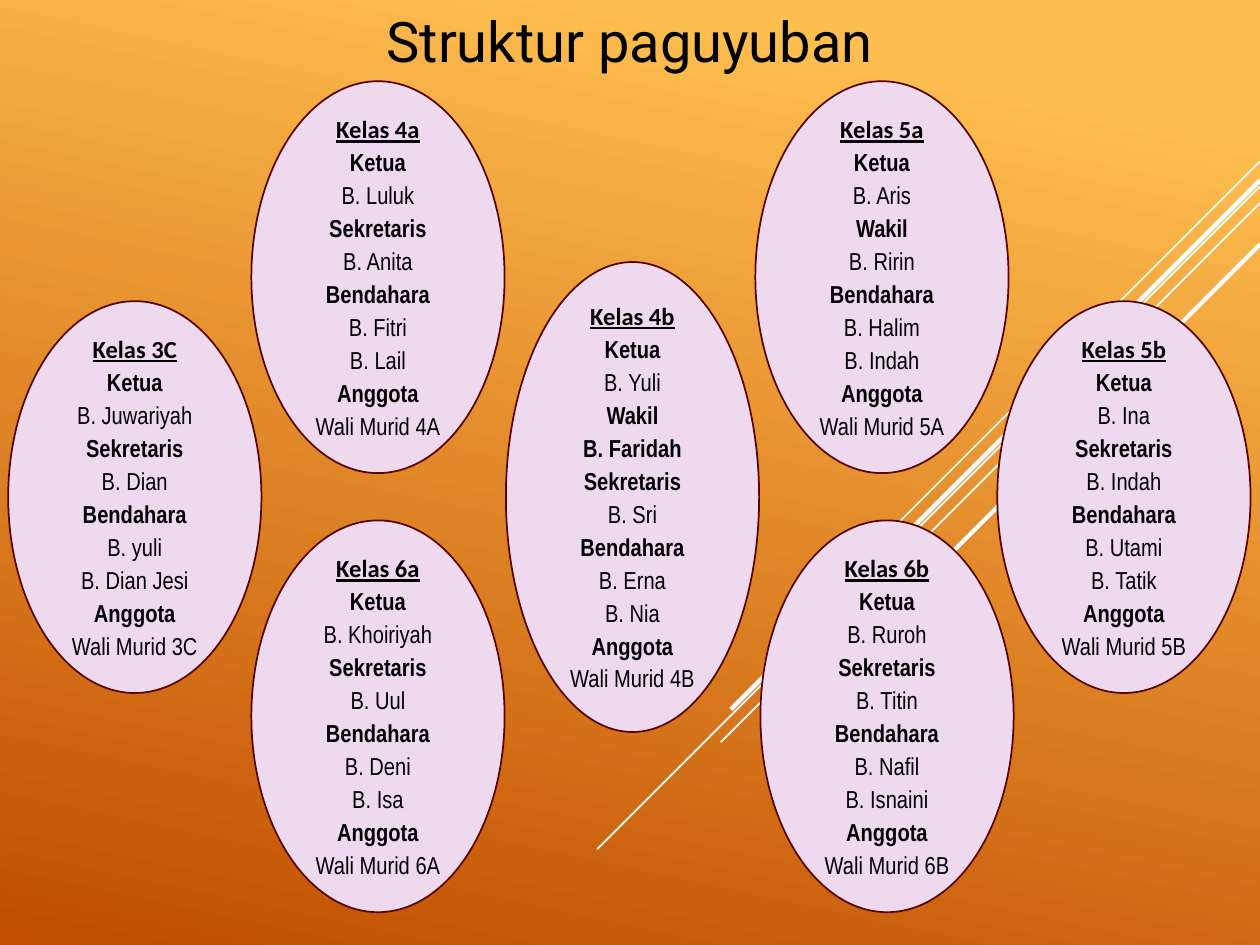
from pptx import Presentation
from pptx.dml.color import RGBColor
from pptx.enum.shapes import MSO_CONNECTOR, MSO_SHAPE
from pptx.enum.text import MSO_ANCHOR, PP_ALIGN
from pptx.oxml.ns import qn
from pptx.util import Inches, Pt
from lxml import etree

OVAL = MSO_SHAPE.OVAL
STRAIGHT = MSO_CONNECTOR.STRAIGHT
CENTER = PP_ALIGN.CENTER
MIDDLE = MSO_ANCHOR.MIDDLE

WIDTH, HEIGHT = 10, 7.5
OVAL_WIDTH, OVAL_HEIGHT, TALL_HEIGHT = 2.01, 3.11, 3.73
TOP_ROW, MIDDLE_ROW, BOTTOM_ROW = 2.2, 3.945, 5.685
FAR_LEFT, LEFT, CENTER_COLUMN, RIGHT, FAR_RIGHT = 1.07, 3, 5.02, 7, 8.92

TITLE = "Struktur paguyuban"
BACKGROUND = [(0.1, "FFBF50"), (1, "C04D00")]
ROLES = {"Ketua", "Wakil", "Sekretaris", "Bendahara", "Anggota"}
BOLD_NAMES = {"B. Faridah"}

STREAKS = [
    (10, 1.28, 3.43, 1),
    (10, 1.48, 5.26, 1),
    (10, 1.61, 4.28, 1),
    (10, 1.43, 4.2, 2.5),
    (10, 1.94, 3.75, 2.5),
]

CLASSES = [
    (LEFT, TOP_ROW, OVAL_HEIGHT, "Kelas 4a",
     ["Ketua", "B. Luluk", "Sekretaris", "B. Anita", "Bendahara",
      "B. Fitri", "B. Lail", "Anggota", "Wali Murid 4A"]),
    (LEFT, BOTTOM_ROW, OVAL_HEIGHT, "Kelas 6a",
     ["Ketua", "B. Khoiriyah", "Sekretaris", "B. Uul", "Bendahara",
      "B. Deni", "B. Isa", "Anggota", "Wali Murid 6A"]),
    (FAR_RIGHT, MIDDLE_ROW, OVAL_HEIGHT, "Kelas 5b",
     ["Ketua", "B. Ina", "Sekretaris", "B. Indah", "Bendahara",
      "B. Utami", "B. Tatik", "Anggota", "Wali Murid 5B"]),
    (FAR_LEFT, MIDDLE_ROW, OVAL_HEIGHT, "Kelas 3C",
     ["Ketua", "B. Juwariyah", "Sekretaris", "B. Dian", "Bendahara",
      "B. yuli", "B. Dian Jesi", "Anggota", "Wali Murid 3C"]),
    (RIGHT, TOP_ROW, OVAL_HEIGHT, "Kelas 5a",
     ["Ketua", "B. Aris", "Wakil", "B. Ririn", "Bendahara",
      "B. Halim", "B. Indah", "Anggota", "Wali Murid 5A"]),
    (CENTER_COLUMN, MIDDLE_ROW, TALL_HEIGHT, "Kelas 4b",
     ["Ketua", "B. Yuli", "Wakil", "B. Faridah", "Sekretaris", "B. Sri",
      "Bendahara", "B. Erna", "B. Nia", "Anggota", "Wali Murid 4B"]),
    (RIGHT + 0.04, BOTTOM_ROW, OVAL_HEIGHT, "Kelas 6b",
     ["Ketua", "B. Ruroh", "Sekretaris", "B. Titin", "Bendahara",
      "B. Nafil", "B. Isnaini", "Anggota", "Wali Murid 6B"]),
]


def color(value):
    return RGBColor.from_string(value)


def format_text(para, font_name, size, bold=False, underline=False):
    para.alignment = CENTER
    for span in para.runs:
        span.font.name = font_name
        span.font.size = Pt(size)
        span.font.bold = bold
        span.font.underline = underline
        span.font.color.rgb = color("000000")


def paint_background(page):
    fill = page.background.fill
    fill.gradient()
    fill.gradient_angle = 360 - 102
    for stop, (position, value) in zip(fill.gradient_stops, BACKGROUND):
        stop.position = position
        stop.color.rgb = color(value)


def add_streak(page, right, top, run, weight):
    line = page.shapes.add_connector(
        STRAIGHT, Inches(right), Inches(top), Inches(right - run), Inches(top + run))
    line.line.color.rgb = color("FFFFFF")
    line.line.width = Pt(weight)
    etree.SubElement(line._element.spPr, qn("a:effectLst"))


def add_title(page):
    box = page.shapes.add_textbox(0, 0, Inches(WIDTH), Inches(0.65))
    box.text_frame.word_wrap = True
    box.text_frame.text = TITLE
    para = box.text_frame.paragraphs[0]
    para.space_after = Pt(6)
    format_text(para, "Roboto", 32)


def add_class(page, center_x, center_y, height, name, members):
    oval = page.shapes.add_shape(
        OVAL, Inches(center_x - OVAL_WIDTH / 2), Inches(center_y - height / 2),
        Inches(OVAL_WIDTH), Inches(height))
    oval.shadow.inherit = False
    oval.fill.solid()
    oval.fill.fore_color.rgb = color("EFD9EF")
    oval.line.color.rgb = color("570402")
    oval.line.width = Pt(1)
    frame = oval.text_frame
    frame.word_wrap = True
    frame.vertical_anchor = MIDDLE
    frame.text = "\n".join([name] + members)
    for para in frame.paragraphs:
        heading = para.text == name
        bold = heading or para.text in ROLES | BOLD_NAMES
        para.space_after = Pt(2)
        format_text(para, "Calibri" if heading else "Arial Narrow", 14, bold, heading)


def main():
    deck = Presentation()
    deck.slide_width, deck.slide_height = Inches(WIDTH), Inches(HEIGHT)
    page = deck.slides.add_slide(deck.slide_layouts[6])
    paint_background(page)
    for streak in STREAKS:
        add_streak(page, *streak)
    add_title(page)
    for group in CLASSES:
        add_class(page, *group)
    deck.save("out.pptx")


if __name__ == "__main__":
    main()
